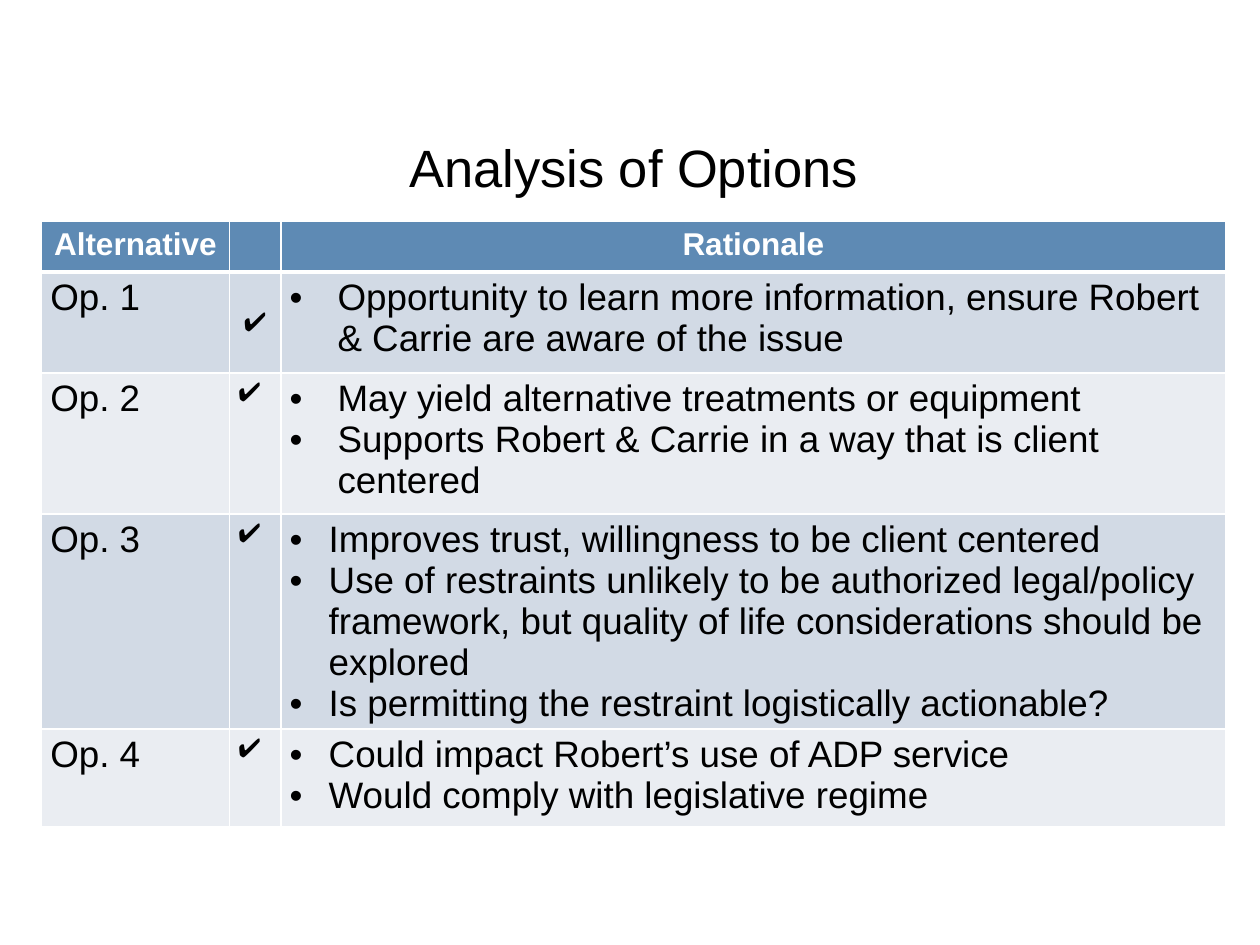
from dataclasses import dataclass

from lxml import etree
from pptx import Presentation
from pptx.dml.color import RGBColor
from pptx.enum.text import MSO_ANCHOR, PP_ALIGN
from pptx.oxml.ns import qn
from pptx.util import Inches, Pt

CENTER, LEFT = PP_ALIGN.CENTER, PP_ALIGN.LEFT
TOP, MIDDLE = MSO_ANCHOR.TOP, MSO_ANCHOR.MIDDLE
FONT = "Arial"
BLACK, WHITE, HEADER = "000000", "FFFFFF", "5E8AB4"
BANDS = ("D2DAE5", "EAEDF2")
COLUMN_WIDTHS = (1.49, 0.41, 7.5)
HEADINGS = ("Alternative ", "", "Rationale")
HEADER_HEIGHT = 0.4
MARGINS = {"margin_left": Inches(0.07), "margin_right": Inches(0.07),
           "margin_top": Inches(0.04), "margin_bottom": Inches(0.04)}


@dataclass
class Option:
    name: str
    height: float
    indent: float
    reasons: tuple[str, ...]
    check_align: PP_ALIGN = LEFT
    check_anchor: MSO_ANCHOR = TOP


OPTIONS = (
    Option("Op. 1", 0.8, 0.38, (
        "Opportunity to learn more information, ensure Robert & Carrie are aware of the issue",
    ), CENTER, MIDDLE),
    Option("Op. 2", 1.12, 0.38, (
        "May yield alternative treatments or equipment",
        "Supports Robert & Carrie in a way that is client centered",
    )),
    Option("Op. 3", 1.51, 0.31, (
        "Improves trust, willingness to be client centered",
        "Use of restraints unlikely to be authorized legal/policy framework, "
        "but quality of life considerations should be explored",
        "Is permitting the restraint logistically actionable?",
    )),
    Option("Op. 4", 0.78, 0.31, (
        "Could impact Robert’s use of ADP service",
        "Would comply with legislative regime",
    )),
)


def color(value: str) -> RGBColor:
    return RGBColor.from_string(value)


def set_all(target, values: dict) -> None:
    for name, value in values.items():
        setattr(target, name, value)


def write(para, text: str, size: float, ink: str = BLACK, bold: bool = False,
          align: PP_ALIGN = LEFT) -> None:
    para.alignment = align
    span = para.add_run()
    span.text = text
    set_all(span.font, {"name": FONT, "size": Pt(size), "bold": bold})
    span.font.color.rgb = color(ink)


def add_bullet(para, indent: float) -> None:
    properties = para._p.get_or_add_pPr()
    properties.set("marL", str(Inches(indent)))
    properties.set("indent", str(-Inches(indent)))
    etree.SubElement(properties, qn("a:buFont"), typeface=FONT)
    etree.SubElement(properties, qn("a:buChar"), char="•")


def format_cell(cell, fill: str, bottom: float = 1, top: float = 1) -> None:
    """Fill the cell and draw white borders, given in points."""
    set_all(cell, MARGINS)
    cell.fill.solid()
    cell.fill.fore_color.rgb = color(fill)
    properties = cell._tc.get_or_add_tcPr()
    sides = (("lnL", 1), ("lnR", 1), ("lnT", top), ("lnB", bottom))
    for position, (side, width) in enumerate(sides):
        line = etree.Element(qn(f"a:{side}"), w=str(Pt(width)))
        solid = etree.SubElement(line, qn("a:solidFill"))
        etree.SubElement(solid, qn("a:srgbClr"), val=WHITE)
        properties.insert(position, line)


def fill_option_row(cells, option: Option) -> None:
    name, check, rationale = cells
    write(name.text_frame.paragraphs[0], option.name, 21)
    write(check.text_frame.paragraphs[0], "✔", 15, bold=True, align=option.check_align)
    check.vertical_anchor = option.check_anchor
    frame = rationale.text_frame
    for number, reason in enumerate(option.reasons):
        para = frame.add_paragraph() if number else frame.paragraphs[0]
        write(para, reason, 21)
        add_bullet(para, option.indent)


def add_options_table(page) -> None:
    heights = (HEADER_HEIGHT, *(option.height for option in OPTIONS))
    table = page.shapes.add_table(
        len(heights), len(COLUMN_WIDTHS), Inches(0.33), Inches(1.76),
        Inches(sum(COLUMN_WIDTHS)), Inches(sum(heights))).table
    for column, width in zip(table.columns, COLUMN_WIDTHS):
        column.width = Inches(width)
    for row, height in zip(table.rows, heights):
        row.height = Inches(height)

    # Header row
    for cell, heading in zip(table.rows[0].cells, HEADINGS):
        format_cell(cell, HEADER, bottom=3)
        if heading:
            write(cell.text_frame.paragraphs[0], heading, 18, WHITE, True, CENTER)

    # One banded row per option
    for number, option in enumerate(OPTIONS):
        cells = list(table.rows[number + 1].cells)
        for cell in cells:
            format_cell(cell, BANDS[number % 2], top=1 if number else 3)
        fill_option_row(cells, option)


def add_title(page) -> None:
    box = page.shapes.title
    set_all(box, {"left": Inches(3.13), "top": Inches(1.02),
                  "width": Inches(3.8), "height": Inches(0.61)})
    set_all(box.text_frame, {"word_wrap": False, "vertical_anchor": MIDDLE})
    write(box.text_frame.paragraphs[0], "Analysis of Options", 30, align=CENTER)


def main() -> None:
    deck = Presentation()
    set_all(deck, {"slide_width": Inches(10), "slide_height": Inches(7.5)})
    page = deck.slides.add_slide(deck.slide_layouts.get_by_name("Title Only"))
    add_title(page)
    add_options_table(page)
    deck.save("out.pptx")


if __name__ == "__main__":
    main()
